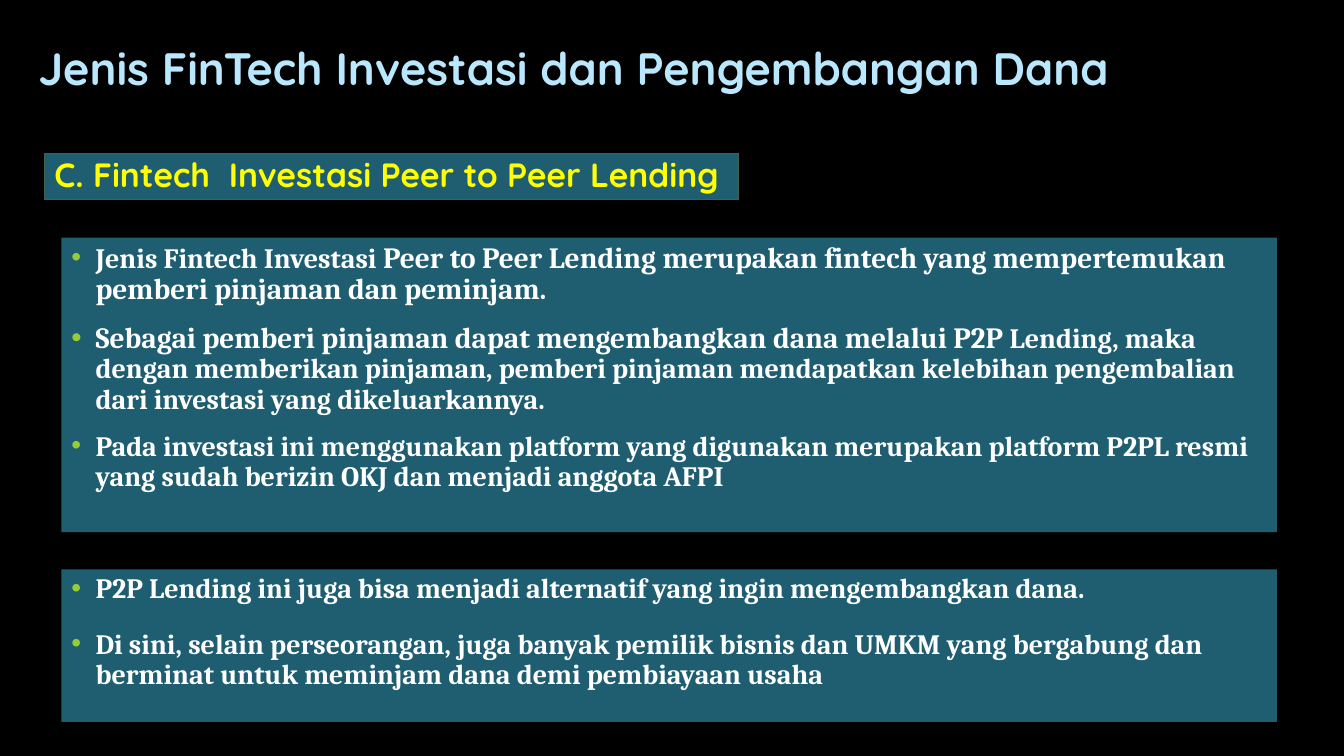
from dataclasses import dataclass
from typing import NamedTuple

from lxml.etree import SubElement
from pptx import Presentation
from pptx.dml.color import RGBColor
from pptx.enum.shapes import MSO_SHAPE
from pptx.enum.text import MSO_ANCHOR, MSO_AUTO_SIZE, PP_ALIGN
from pptx.oxml.ns import qn
from pptx.util import Cm, Pt


@dataclass(frozen=True)
class Theme:
    background: str = "000000"
    panel: str = "1E5E70"
    outline: str = "455F51"
    title: str = "B9E7FD"
    heading: str = "FFFF00"
    body: str = "FFFFFF"
    bullet: str = "99CB38"
    display_font: str = "Quicksand"
    body_font: str = "Cambria"
    title_size: float = 32.4
    heading_size: float = 24
    large_size: float = 21
    body_size: float = 20
    line_spacing: float = 0.9
    indent: float = 0.61


THEME = Theme()


class Box(NamedTuple):
    left: float
    top: float
    width: float
    height: float


class Run(NamedTuple):
    text: str
    size: float = THEME.body_size


class Panel(NamedTuple):
    box: Box
    gap: float
    items: list[list[Run]]


TITLE_BOX = Box(0.71, 0.66, 28.78, 1.88)
HEADING_BOX = Box(1.12, 3.86, 17.5, 1.17)
PANELS = [
    Panel(Box(1.55, 5.99, 30.63, 7.42), 12, [
        [Run("Jenis Fintech Investasi "),
         Run("Peer to Peer Lending merupakan fintech yang mempertemukan "
             "pemberi pinjaman dan peminjam.", THEME.large_size)],
        [Run("Sebagai pemberi pinjaman dapat mengembangkan dana melalui P2P ",
             THEME.large_size),
         Run("Lending, maka dengan memberikan pinjaman, pemberi pinjaman mendapatkan "
             "kelebihan pengembalian dari investasi yang dikeluarkannya.")],
        [Run("Pada investasi ini menggunakan platform yang digunakan merupakan "
             "platform P2PL resmi yang sudah berizin OKJ dan menjadi anggota AFPI")],
    ]),
    Panel(Box(1.55, 14.35, 30.63, 3.84), 18, [
        [Run("P2P Lending ini juga bisa menjadi alternatif yang ingin "
             "mengembangkan dana.")],
        [Run("Di sini, selain perseorangan, juga banyak pemilik bisnis dan UMKM yang "
             "bergabung dan berminat untuk meminjam dana demi pembiayaan usaha")],
    ]),
]


def color(value: str) -> RGBColor:
    return RGBColor.from_string(value)


def add_bullet(paragraph) -> None:
    properties = paragraph._p.get_or_add_pPr()
    properties.set("marL", str(Cm(THEME.indent)))
    properties.set("indent", str(-Cm(THEME.indent)))
    bullet_color = SubElement(properties, qn("a:buClr"))
    SubElement(bullet_color, qn("a:srgbClr")).set("val", THEME.bullet)
    SubElement(properties, qn("a:buFont")).set("typeface", "Arial")
    SubElement(properties, qn("a:buChar")).set("char", "•")


def write_text(shape, paragraphs: list[list[Run]], *, font: str, fill: str,
               anchor: MSO_ANCHOR = MSO_ANCHOR.TOP, gap: float = 0,
               bulleted: bool = False) -> None:
    frame = shape.text_frame
    frame.word_wrap = True
    frame.auto_size = MSO_AUTO_SIZE.NONE
    frame.vertical_anchor = anchor
    for index, runs in enumerate(paragraphs):
        paragraph = frame.add_paragraph() if index else frame.paragraphs[0]
        paragraph.alignment = PP_ALIGN.LEFT
        paragraph.line_spacing = THEME.line_spacing
        paragraph.space_before = Pt(gap if index else 0)
        if bulleted:
            add_bullet(paragraph)
        for item in runs:
            run = paragraph.add_run()
            run.text = item.text
            run.font.name = font
            run.font.size = Pt(item.size)
            run.font.bold = True
            run.font.color.rgb = color(fill)


def place(shape, box: Box) -> None:
    shape.left, shape.top, shape.width, shape.height = map(Cm, box)


def add_panel(slide, box: Box, outline: str | None = None):
    shape = slide.shapes.add_shape(MSO_SHAPE.RECTANGLE, *map(Cm, box))
    shape.shadow.inherit = False
    shape.fill.solid()
    shape.fill.fore_color.rgb = color(THEME.panel)
    if outline:
        shape.line.color.rgb = color(outline)
        shape.line.width = Pt(0.75)
    else:
        shape.line.fill.background()
    return shape


def main() -> None:
    presentation = Presentation()
    presentation.slide_width, presentation.slide_height = Cm(33.87), Cm(19.05)
    slide = presentation.slides.add_slide(presentation.slide_layouts.get_by_name("Title Only"))
    slide.background.fill.solid()
    slide.background.fill.fore_color.rgb = color(THEME.background)

    # Title
    title = slide.shapes.title
    place(title, TITLE_BOX)
    write_text(title, [[Run("Jenis FinTech Investasi dan Pengembangan Dana", THEME.title_size)]],
               font=THEME.display_font, fill=THEME.title, anchor=MSO_ANCHOR.BOTTOM)

    # Section heading
    heading = add_panel(slide, HEADING_BOX, THEME.outline)
    write_text(heading, [[Run("C. Fintech  Investasi Peer to Peer Lending", THEME.heading_size)]],
               font=THEME.display_font, fill=THEME.heading, anchor=MSO_ANCHOR.MIDDLE)

    # Bulleted panels
    for panel in PANELS:
        write_text(add_panel(slide, panel.box), panel.items, font=THEME.body_font,
                   fill=THEME.body, gap=panel.gap, bulleted=True)

    presentation.save("out.pptx")


if __name__ == "__main__":
    main()
